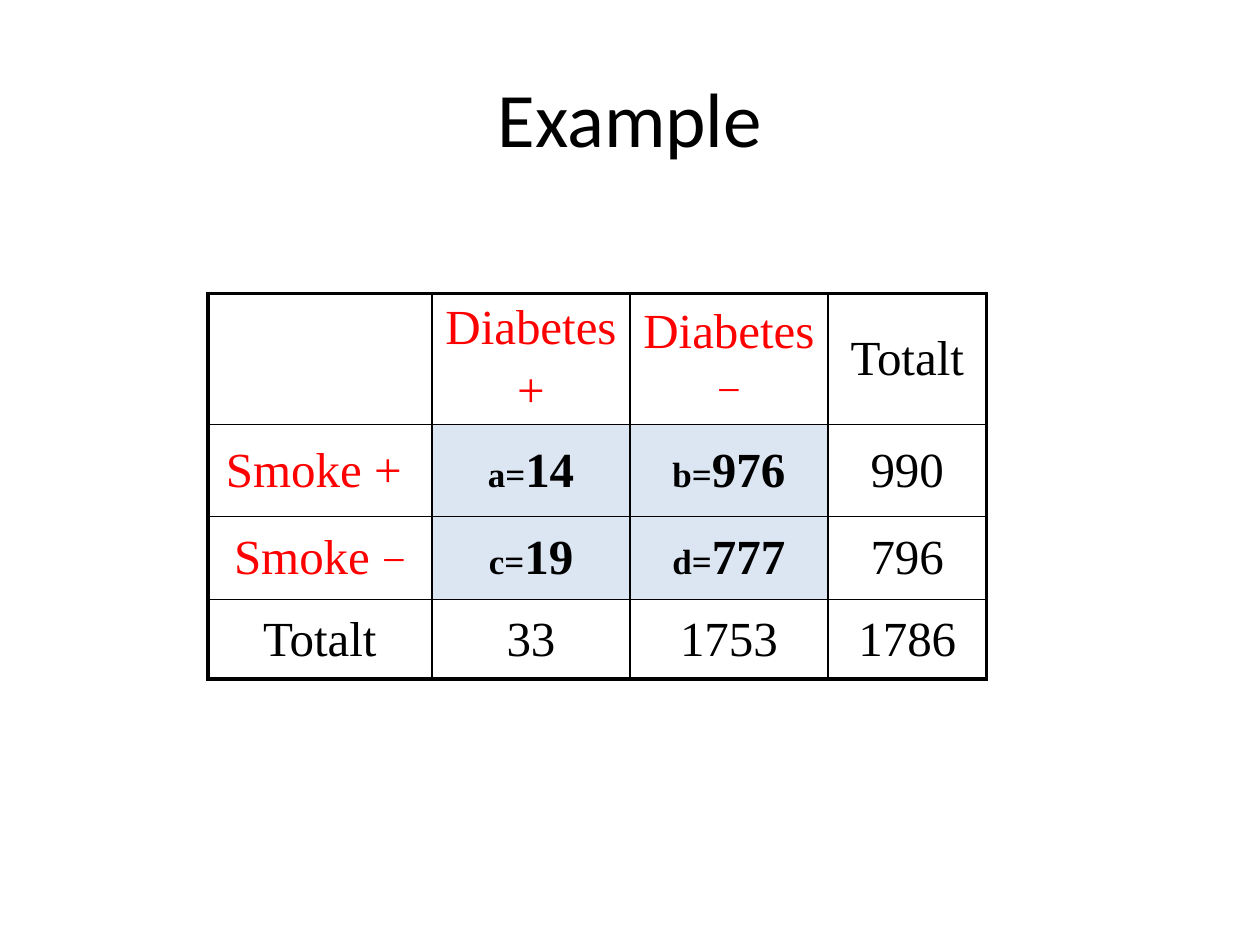
from lxml.etree import SubElement
from pptx import Presentation
from pptx.dml.color import RGBColor
from pptx.enum.text import MSO_ANCHOR, PP_ALIGN
from pptx.oxml import parse_xml
from pptx.oxml.ns import nsdecls
from pptx.util import Cm, Pt

BLACK = RGBColor(0x00, 0x00, 0x00)
RED = RGBColor(0xFF, 0x00, 0x00)
WHITE = RGBColor(0xFF, 0xFF, 0xFF)
PALE_BLUE = RGBColor(0xDC, 0xE6, 0xF2)

COLUMN_WIDTHS = [4.52, 3.99, 3.99, 3.2]
ROW_HEIGHTS = [2.64, 1.85, 1.68, 1.6]
# Each cell is a list of paragraphs, each paragraph a list of (text, size).
ROWS = [
    [[], [[("Diabetes", 28)], [("+", 28)]],
     [[("Diabetes", 28)], [("−", 24)]], [[("Totalt", 28)]]],
    [[[("Smoke + ", 28)]], [[("a=", 20), ("14", 28)]],
     [[("b=", 20), ("976", 28)]], [[("990", 28)]]],
    [[[("Smoke ", 28), ("−", 24)]], [[("c=", 20), ("19", 28)]],
     [[("d=", 20), ("777", 28)]], [[("796", 28)]]],
    [[[("Totalt", 28)]], [[("33", 28)]], [[("1753", 28)]], [[("1786", 28)]]],
]


def format_font(font, **values):
    color = values.pop("color")
    for name, value in values.items():
        setattr(font, name, value)
    font.color.rgb = color


def add_title(page, text):
    title = page.shapes.title
    place = {"left": Cm(1.27), "top": Cm(0.76),
             "width": Cm(22.86), "height": Cm(3.18)}
    for name, value in place.items():
        setattr(title, name, value)
    frame = title.text_frame
    frame.text = text
    frame.vertical_anchor = MSO_ANCHOR.MIDDLE
    para = frame.paragraphs[0]
    para.alignment = PP_ALIGN.CENTER
    format_font(para.runs[0].font, name="Calibri", size=Pt(44), color=BLACK)


def set_borders(cell, widths):
    """Draw black borders; widths maps L, R, T and B to points."""
    properties = cell._tc.get_or_add_tcPr()
    for index, side in enumerate("LRTB"):
        line = parse_xml(
            f'<a:ln{side} {nsdecls("a")} w="{Pt(widths[side])}">'
            f'<a:solidFill><a:srgbClr val="{BLACK}"/></a:solidFill>'
            f'</a:ln{side}>')
        properties.insert(index, line)


def fill_cell(cell, paragraphs, color, bold, background):
    cell.fill.solid()
    cell.fill.fore_color.rgb = background
    cell.vertical_anchor = MSO_ANCHOR.MIDDLE
    cell.margin_top = cell.margin_bottom = Cm(0.1)
    frame = cell.text_frame
    for index, spans in enumerate(paragraphs):
        para = frame.add_paragraph() if index else frame.paragraphs[0]
        para.alignment = PP_ALIGN.CENTER
        para.space_before = Pt(4.8)
        for text, size in spans:
            span = para.add_run()
            span.text = text
            format_font(span.font, name="Times New Roman", size=Pt(size),
                        bold=bold, color=color)


def add_contingency_table(page):
    last_row, last_column = len(ROWS) - 1, len(COLUMN_WIDTHS) - 1
    table = page.shapes.add_table(
        len(ROWS), len(COLUMN_WIDTHS), Cm(4.19), Cm(5.92),
        Cm(sum(COLUMN_WIDTHS)), Cm(sum(ROW_HEIGHTS))).table
    table.first_row = table.horz_banding = False
    for column, width in zip(table.columns, COLUMN_WIDTHS):
        column.width = Cm(width)
    for row, height in zip(table.rows, ROW_HEIGHTS):
        row.height = Cm(height)

    for r, row in enumerate(ROWS):
        for c, paragraphs in enumerate(row):
            is_count = 0 < r < last_row and 0 < c < last_column
            is_total = r == last_row or c == last_column
            cell = table.cell(r, c)
            fill_cell(cell, paragraphs,
                      color=BLACK if is_count or is_total else RED,
                      bold=is_count,
                      background=PALE_BLUE if is_count else WHITE)
            outer = {"L": c == 0, "R": c == last_column,
                     "T": r == 0, "B": r == last_row}
            set_borders(cell, {side: 2.25 if edge else 1
                               for side, edge in outer.items()})


def main():
    deck = Presentation()
    deck.slide_width, deck.slide_height = Cm(25.4), Cm(19.05)
    page = deck.slides.add_slide(deck.slide_layouts[5])
    add_title(page, "Example")
    add_contingency_table(page)
    deck.save("out.pptx")


if __name__ == "__main__":
    main()
